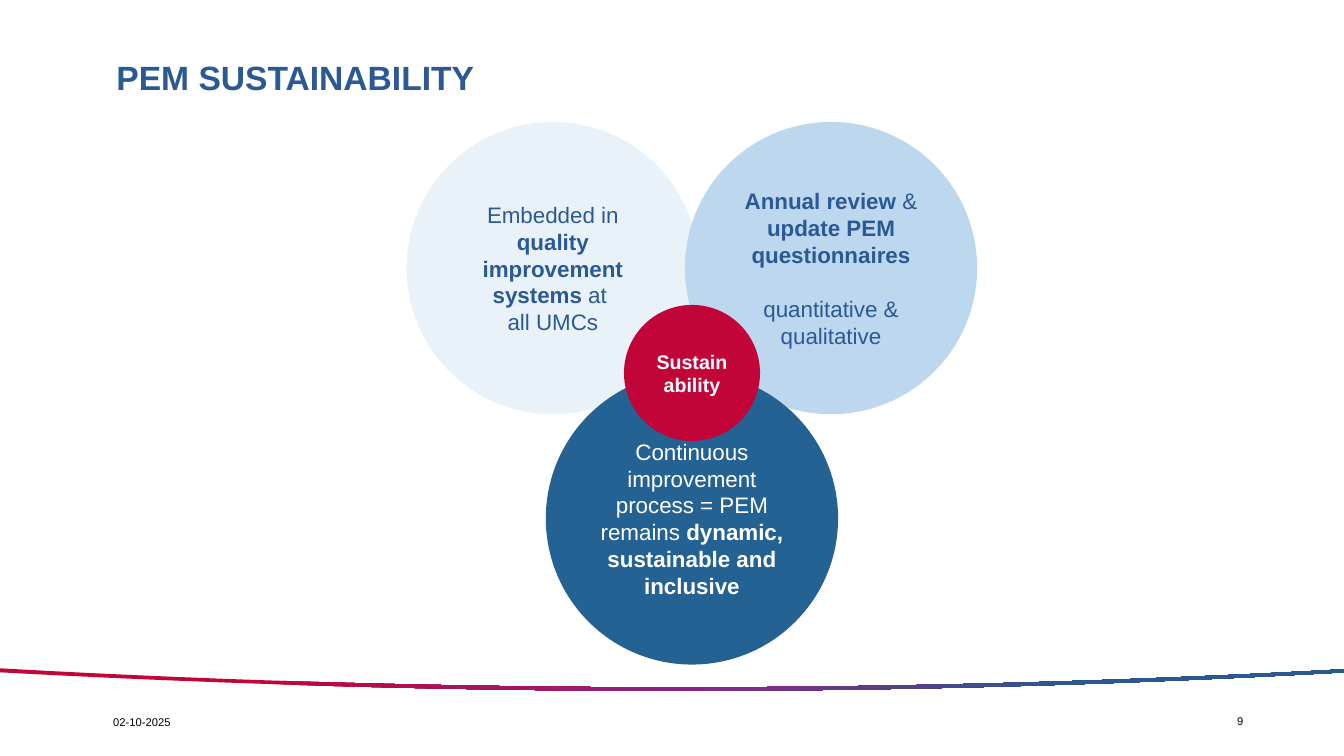
from dataclasses import dataclass

from lxml import etree
from copy import deepcopy
from pptx import Presentation
from pptx import util as u
from pptx.dml.color import RGBColor
from pptx.enum import shapes, text
from pptx.oxml.ns import qn

CELL = u.Inches(1) / 6
COLUMNS, ROWS = 80, 45


@dataclass(frozen=True)
class Theme:
    """Colours, font and type sizes of the slide."""

    font: str = "Arial"
    blue: str = "2B5993"
    purple: str = "8C2383"
    red: str = "C10538"
    pale: str = "E9F2F9"
    light: str = "BCD7EE"
    deep: str = "256294"
    white: str = "FFFFFF"
    black: str = "000000"
    title: int = 24
    body: int = 16
    hub: int = 14
    footer: int = 8


THEME = Theme()


def cells(*counts):
    """Convert grid cells to lengths."""
    return [u.Emu(round(count * CELL)) for count in counts]


def add_runs(paragraph, runs, size, color):
    """Add (words, bold) runs to a paragraph."""
    for words, bold in runs:
        run = paragraph.add_run()
        run.text = words
        run.font.name = THEME.font
        run.font.size = u.Pt(size)
        run.font.bold = bold
        run.font.color.rgb = RGBColor.from_string(color)


def add_label(slide, box, words, size, color, bold=False):
    """Add a one-line text box and return its frame."""
    frame = slide.shapes.add_textbox(*cells(*box)).text_frame
    frame.word_wrap = True
    add_runs(frame.paragraphs[0], [(words, bold)], size, color)
    return frame


def add_title(slide, words):
    """Add the slide title without insets."""
    frame = add_label(slide, (6.93, 2.34, 68.52, 4.74), words, THEME.title, THEME.blue, True)
    frame.margin_left = frame.margin_right = frame.margin_top = frame.margin_bottom = 0
    frame.vertical_anchor = text.MSO_ANCHOR.MIDDLE
    frame.paragraphs[0].line_spacing = 0.9


def add_circle(slide, center, diameter, fill, paragraphs, color, size=THEME.body, gap=0):
    """Add a filled circle with centred paragraphs of runs."""
    left, top = (middle - diameter / 2 for middle in center)
    shape = slide.shapes.add_shape(
        shapes.MSO_SHAPE.OVAL, *cells(left, top, diameter, diameter))
    shape.shadow.inherit = False
    shape.fill.solid()
    shape.fill.fore_color.rgb = RGBColor.from_string(fill)
    shape.line.fill.background()
    frame = shape.text_frame
    frame.word_wrap = True
    frame.vertical_anchor = text.MSO_ANCHOR.MIDDLE
    for index, runs in enumerate(paragraphs):
        paragraph = frame.add_paragraph() if index else frame.paragraphs[0]
        paragraph.alignment = text.PP_ALIGN.CENTER
        if index and gap:
            paragraph.space_before = u.Pt(gap)
        add_runs(paragraph, runs, size, color)


def bend(segments):
    """Turn three straight segments into one cubic curve."""
    curve = etree.Element(qn("a:cubicBezTo"))
    segments[0].addprevious(curve)
    for segment in segments:
        curve.append(segment[0])
        segment.getparent().remove(segment)


def add_swoosh(slide):
    """Add the thin gradient curve above the footer."""
    columns = [COLUMNS * third / 3 for third in range(4)]
    lower = list(zip(columns, (40.02, 41.46, 41.52, 40.02)))
    upper = list(zip(columns, (39.78, 41.28, 41.28, 39.84)))
    start, *outline = [cells(*point) for point in lower + upper[::-1]]
    builder = slide.shapes.build_freeform(*start)
    builder.add_line_segments(outline, close=True)
    shape = builder.convert_to_shape()
    segments = list(shape.element.iter(qn("a:lnTo")))
    bend(segments[:3])
    bend(segments[4:7])
    shape.shadow.inherit = False
    shape.line.fill.background()
    shape.fill.gradient()
    shape.fill.gradient_angle = 0
    stop_list = next(shape.element.iter(qn("a:gsLst")))
    stop_list.append(deepcopy(stop_list[0]))
    stops = ((0.2, THEME.red), (0.5, THEME.purple), (0.8, THEME.blue))
    for stop, (position, color) in zip(shape.fill.gradient_stops, stops):
        stop.position = position
        stop.color.rgb = RGBColor.from_string(color)


def main():
    """Build the slide and save it."""
    presentation = Presentation()
    presentation.slide_width, presentation.slide_height = cells(COLUMNS, ROWS)
    slide = presentation.slides.add_slide(presentation.slide_layouts[6])

    add_swoosh(slide)
    add_title(slide, "PEM SUSTAINABILITY")
    add_label(slide, (6.15, 42.3, 11.82, 1.44), "02-10-2025", THEME.footer, THEME.black)
    add_label(slide, (73.05, 42.24, 3.42, 1.44), "9", THEME.footer, THEME.black)

    middle, step, diameter = 41.19, 8.28, 17.4
    upper_row, lower_row = 15.96, 30.86
    embedded = [
        [("Embedded in ", False), ("quality improvement systems ", True), ("at ", False)],
        [("all UMCs", False)],
    ]
    review = [
        [("Annual review ", True), ("& ", False), ("update PEM questionnaires", True)],
        [("quantitative & qualitative", False)],
    ]
    process = [[
        ("Continuous improvement process = PEM remains ", False),
        ("dynamic, sustainable and inclusive", True),
    ]]
    add_circle(slide, (middle - step, upper_row), diameter, THEME.pale, embedded, THEME.blue)
    add_circle(slide, (middle + step, upper_row), diameter, THEME.light, review, THEME.blue,
               gap=19.2)
    add_circle(slide, (middle, lower_row), diameter, THEME.deep, process, THEME.white)
    add_circle(slide, (middle, 22.2), 8.1, THEME.red, [[("Sustainability", True)]],
               THEME.white, THEME.hub)

    presentation.save("out.pptx")


if __name__ == "__main__":
    main()
